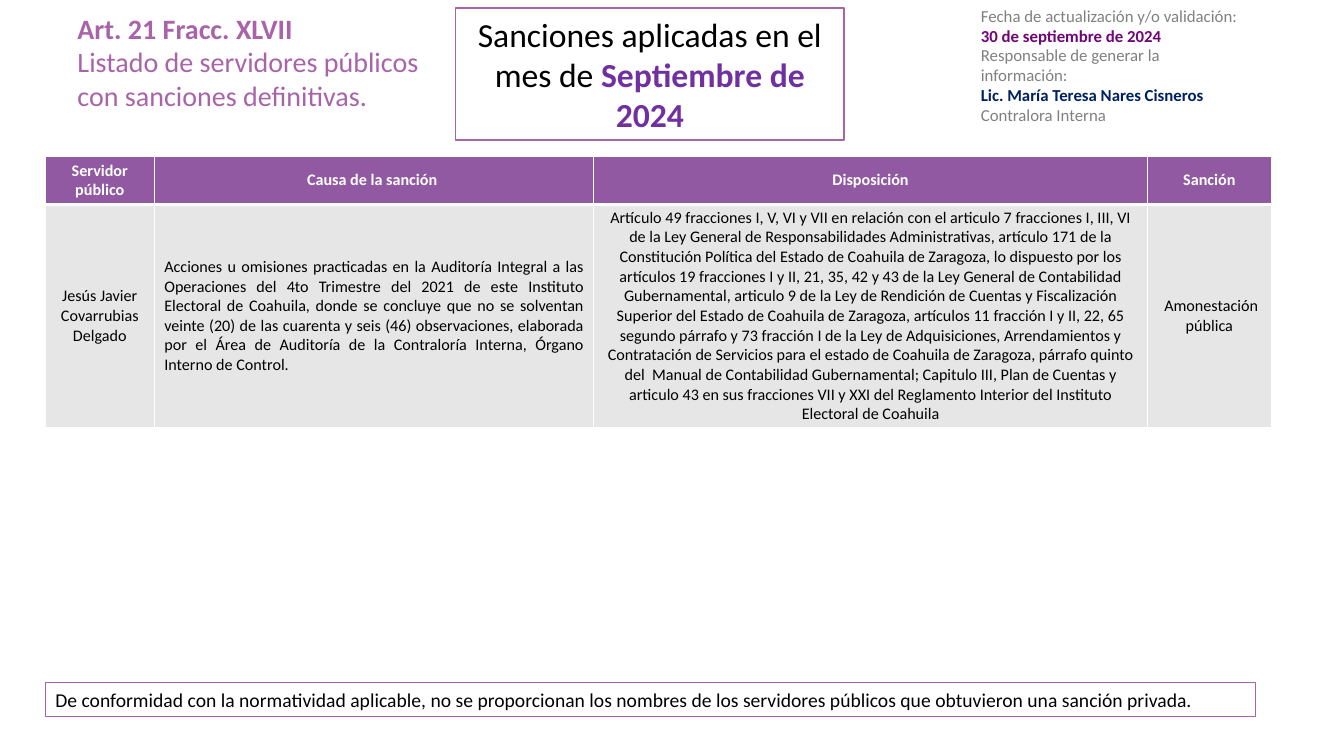
import pptx
import pptx.util
import pptx.dml.color
import pptx.enum.text
import pptx.enum.shapes
import pptx.oxml
import pptx.oxml.ns

PX = 9144
FONT = "Calibri"
COLORS = {
    "white": "FFFFFF",
    "black": "000000",
    "gray": "808080",
    "lilac": "A963A9",
    "violet": "7030A0",
    "plum": "6F0579",
    "navy": "002060",
    "header": "9059A1",
    "body": "E7E6E6",
}
ALIGN = pptx.enum.text.PP_ALIGN
ANCHOR = pptx.enum.text.MSO_ANCHOR

HEADERS = ["Servidor público", "Causa de la sanción ", "Disposición", "Sanción"]
PROVISIONS = [
    "Artículo 49 fracciones I, V, VI y VII en relación con el articulo 7 fracciones I, III, VI "
    "de la Ley General de Responsabilidades Administrativas,",
    "artículo 171 de la Constitución Política del Estado de Coahuila de Zaragoza,",
    "lo dispuesto por los artículos 19 fracciones I y II, 21, 35, 42 y 43 de la Ley General de "
    "Contabilidad Gubernamental,",
    "articulo 9 de la Ley de Rendición de Cuentas y Fiscalización Superior del Estado de "
    "Coahuila de Zaragoza,",
    "artículos 11 fracción I y II, 22, 65 segundo párrafo y 73 fracción I de la Ley de "
    "Adquisiciones, Arrendamientos y Contratación de Servicios para el estado de Coahuila de "
    "Zaragoza,",
    "párrafo quinto del  Manual de Contabilidad Gubernamental;",
    "Capitulo III, Plan de Cuentas y articulo 43 en sus fracciones VII y XXI del Reglamento "
    "Interior del Instituto Electoral de Coahuila",
]
SANCTION = [
    "Jesús Javier Covarrubias Delgado",
    "Acciones u omisiones practicadas en la Auditoría Integral a las Operaciones del 4to "
    "Trimestre del 2021 de este Instituto Electoral de Coahuila, donde se concluye que no se "
    "solventan veinte (20) de las cuarenta y seis (46) observaciones, elaborada por el Área de "
    "Auditoría de la Contraloría Interna, Órgano Interno de Control.",
    " ".join(PROVISIONS),
    " Amonestación pública",
]


def px(*lengths):
    return [pptx.util.Emu(n * PX) for n in lengths]


def rgb(name):
    return pptx.dml.color.RGBColor.from_string(COLORS[name])


def format_run(r, size, color, bold=False):
    r.font.name = FONT
    r.font.size = pptx.util.Pt(size)
    r.font.bold = bold
    r.font.color.rgb = rgb(color)


def write(tf, paragraphs, size, align=ALIGN.LEFT):
    tf.text = "\n".join("".join(text for text, _, _ in runs) for runs in paragraphs)
    for p, runs in zip(tf.paragraphs, paragraphs):
        p.alignment = align
        p.text = ""
        for text, color, bold in runs:
            r = p.add_run()
            r.text = text
            format_run(r, size, color, bold)


def frame(sp):
    sp.fill.solid()
    sp.fill.fore_color.rgb = rgb("white")
    sp.line.color.rgb = rgb("lilac")
    sp.line.width = pptx.util.Pt(1)


def add_text(s, box, paragraphs, size, wrap=True):
    tf = s.shapes.add_textbox(*px(*box)).text_frame
    tf.word_wrap = wrap
    write(tf, paragraphs, size)


def add_title(s, x, y, w, h):
    sp = s.shapes.title
    sp.left, sp.top, sp.width, sp.height = px(x, y, w, h)
    frame(sp)
    tf = sp.text_frame
    tf.word_wrap = True
    tf.auto_size = pptx.enum.text.MSO_AUTO_SIZE.NONE
    tf.vertical_anchor = ANCHOR.MIDDLE
    write(tf, [[("Sanciones aplicadas en el mes de ", "black", False),
                ("Septiembre de 2024", "violet", True)]], 24, ALIGN.CENTER)


def add_article(s, x, y, w, h):
    add_text(s, (x, y, w, h), [
        [("Art. 21 Fracc. XLVII", "lilac", True)],
        [("Listado de servidores públicos con sanciones definitivas.", "lilac", False)],
    ], 20)


def add_validation(s, x, y, w, h):
    add_text(s, (x, y, w, 50), [
        [("Fecha de actualización y/o validación:", "gray", False)],
        [("30 de septiembre de 2024", "plum", True)],
    ], 12, wrap=False)
    add_text(s, (x, y + 38, w - 16, h - 38), [
        [("Responsable de generar la información:", "gray", False)],
        [("Lic. María Teresa Nares Cisneros", "navy", True)],
        [("Contralora Interna", "gray", False)],
    ], 12)


def set_borders(cell, is_header):
    widths = {"L": 1, "R": 1, "T": 1 if is_header else 3, "B": 3 if is_header else 1}
    tc_pr = cell._tc.get_or_add_tcPr()
    for side, width in widths.items():
        tc_pr.append(pptx.oxml.parse_xml(
            f'<a:ln{side} {pptx.oxml.ns.nsdecls("a")} w="{width * 12700}"><a:solidFill>'
            f'<a:srgbClr val="{COLORS["white"]}"/></a:solidFill></a:ln{side}>'))


def add_sanctions(s, x, y, w, h):
    widths = [108, 436, 549]
    widths.append(w - sum(widths))
    table = s.shapes.add_table(2, len(HEADERS), *px(x, y, w, h)).table
    table.first_row = True
    table.horz_banding = False
    for column, width in zip(table.columns, px(*widths)):
        column.width = width
    for row, height in zip(table.rows, px(48, h - 48)):
        row.height = height
    for i, texts in enumerate([HEADERS, SANCTION]):
        is_header = i == 0
        for j, text in enumerate(texts):
            cell = table.cell(i, j)
            set_borders(cell, is_header)
            cell.fill.solid()
            cell.fill.fore_color.rgb = rgb("header" if is_header else "body")
            cell.vertical_anchor = ANCHOR.MIDDLE
            cell.margin_top, cell.margin_bottom = px(3, 3)
            justified = not is_header and j == 1
            write(cell.text_frame, [[(text, "white" if is_header else "black", is_header)]],
                  11.5, ALIGN.JUSTIFY if justified else ALIGN.CENTER)


def add_notice(s, x, y, w, h):
    sp = s.shapes.add_shape(pptx.enum.shapes.MSO_SHAPE.RECTANGLE, *px(x, y, w, h))
    sp.shadow.inherit = False
    frame(sp)
    tf = sp.text_frame
    tf.word_wrap = True
    tf.vertical_anchor = ANCHOR.MIDDLE
    write(tf, [[("De conformidad con la normatividad aplicable, no se proporcionan los nombres "
                 "de los servidores públicos que obtuvieron una sanción privada.",
                 "black", False)]], 14)


def main():
    prs = pptx.Presentation()
    prs.slide_width, prs.slide_height = px(1333, 750)
    s = prs.slides.add_slide(prs.slide_layouts.get_by_name("Title Only"))
    add_article(s, 67, 6, 385, 145)
    add_title(s, 452, 8, 385, 131)
    add_validation(s, 963, 1, 281, 129)
    add_sanctions(s, 45, 155, 1216, 269)
    add_notice(s, 45, 677, 1200, 34)
    prs.save("out.pptx")


if __name__ == "__main__":
    main()
